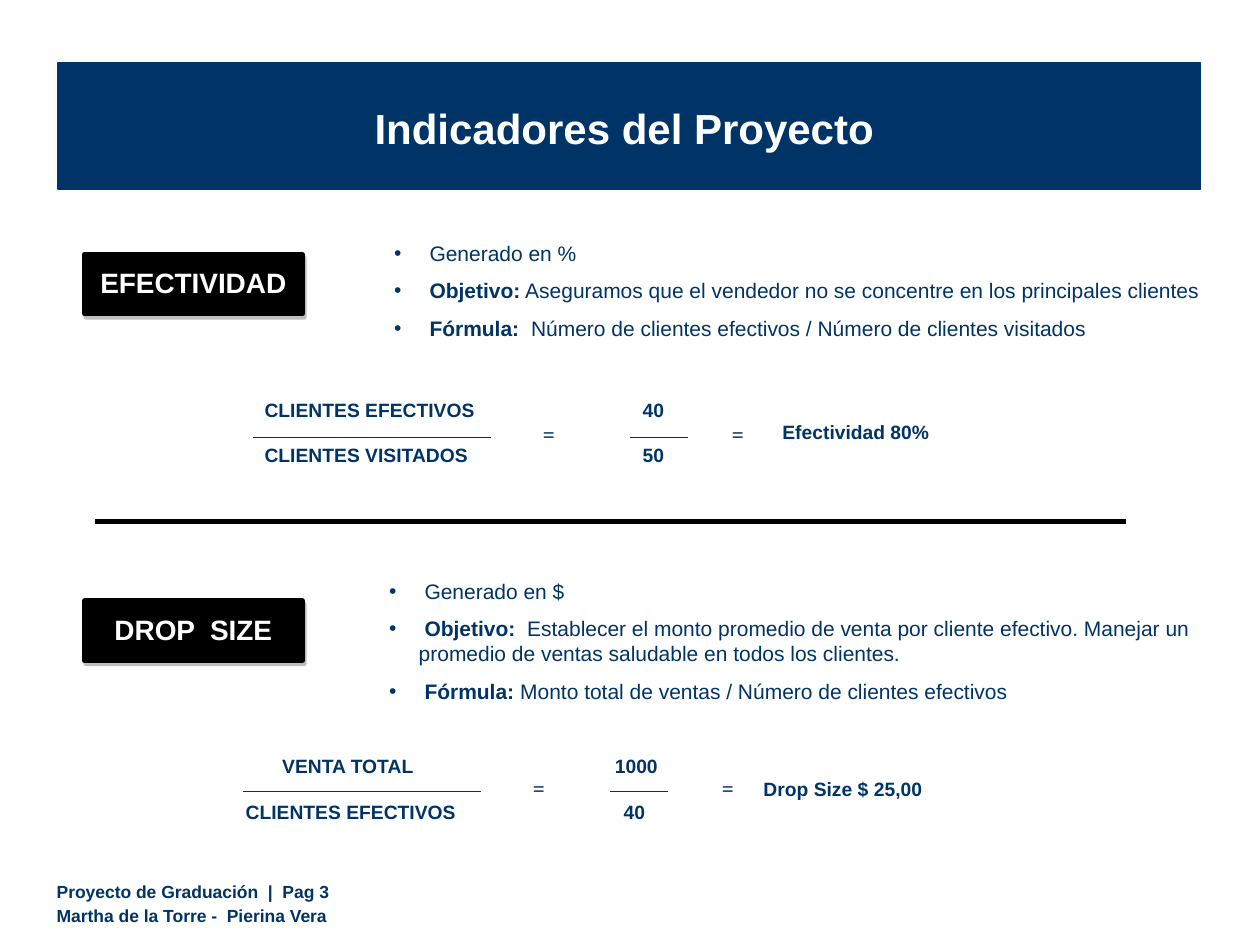
from lxml import etree
from pptx import Presentation
from pptx.dml.color import RGBColor
from pptx.enum.shapes import MSO_CONNECTOR, MSO_SHAPE
from pptx.enum.text import MSO_ANCHOR, PP_ALIGN
from pptx.oxml import parse_xml
from pptx.oxml.ns import nsdecls, qn
from pptx.util import Inches, Pt

RECTANGLE = MSO_SHAPE.RECTANGLE
STRAIGHT = MSO_CONNECTOR.STRAIGHT
LEFT, CENTER = PP_ALIGN.LEFT, PP_ALIGN.CENTER
TOP, MIDDLE, BOTTOM = MSO_ANCHOR.TOP, MSO_ANCHOR.MIDDLE, MSO_ANCHOR.BOTTOM
NAVY, WHITE, BLACK = "003366", "FFFFFF", "000000"

TITLE = "Indicadores del Proyecto"
FOOTER = ["Proyecto de Graduación  |  Pag 3", "Martha de la Torre -  Pierina Vera"]
INDICATORS = [
    {
        "label": "EFECTIVIDAD", "label_top": 2.02,
        "bullets_at": (3.03, 1.86, 6.73, 0.9),
        "bullets": [
            ("", " Generado en %"),
            (" Objetivo:", " Aseguramos que el vendedor no se concentre en los principales clientes"),
            (" Fórmula:", "  Número de clientes efectivos / Número de clientes visitados"),
        ],
        "bar_start": (2.01, 3.47), "value_bar": 5.0,
        "terms": [
            ("CLIENTES EFECTIVOS", 2.1, 3.25), ("CLIENTES VISITADOS", 2.1, 3.61),
            ("40", 5.1, 3.25), ("50", 5.1, 3.61), ("Efectividad 80%", 6.21, 3.43),
        ],
    },
    {
        "label": "DROP  SIZE", "label_top": 4.77,
        "bullets_at": (2.99, 4.54, 6.73, 1.1),
        "bullets": [
            ("", " Generado en $"),
            (" Objetivo:", "  Establecer el monto promedio de venta por cliente efectivo. "
             "Manejar un promedio de ventas saludable en todos los clientes."),
            (" Fórmula: ", "Monto total de ventas / Número de clientes efectivos"),
        ],
        "bar_start": (1.93, 6.28), "value_bar": 4.84,
        "terms": [
            ("VENTA TOTAL", 2.24, 6.08), ("CLIENTES EFECTIVOS", 1.95, 6.44),
            ("1000", 4.88, 6.08), ("40", 4.95, 6.44), ("Drop Size $ 25,00", 6.06, 6.26),
        ],
    },
]


def color(value):
    return RGBColor.from_string(value)


def set_frame(box, insets, anchor):
    frame = box.text_frame
    frame.word_wrap = True
    frame.vertical_anchor = anchor
    frame.margin_left, frame.margin_top, frame.margin_right, frame.margin_bottom = map(Inches, insets)
    return frame


def style(span, size, ink=NAVY, bold=True, font="Arial"):
    span.font.name = font
    span.font.size = Pt(size)
    span.font.bold = bold
    span.font.color.rgb = color(ink)


def write(box, text, size, ink=NAVY, align=LEFT, anchor=TOP,
          insets=(0.1, 0.05, 0.1, 0.05), space=0, font="Arial"):
    frame = set_frame(box, insets, anchor)
    frame.text = text
    for para in frame.paragraphs:
        para.alignment = align
        para.space_before = Pt(space)
        for span in para.runs:
            style(span, size, ink, font=font)


def add_box(page, place):
    return page.shapes.add_textbox(*map(Inches, place))


def add_rectangle(page, place, fill, border, width):
    box = page.shapes.add_shape(RECTANGLE, *map(Inches, place))
    box.shadow.inherit = False
    box.fill.solid()
    box.fill.fore_color.rgb = color(fill)
    box.line.color.rgb = color(border)
    box.line.width = Pt(width)
    return box


def add_line(page, left, top, length, ink, width):
    line = page.shapes.add_connector(STRAIGHT, *map(Inches, (left, top, left + length, top)))
    line.line.color.rgb = color(ink)
    line.line.width = Pt(width)
    etree.SubElement(line._element.spPr, qn("a:effectLst"))


def add_label(page, text, top):
    box = add_rectangle(page, (0.67, top, 1.73, 0.47), BLACK, BLACK, 3)
    effects = box._element.spPr.find(qn("a:effectLst"))
    effects.append(parse_xml(
        f'<a:outerShdw {nsdecls("a")} dist="27940" dir="3780000" rotWithShape="0">'
        '<a:srgbClr val="7F7F7F"><a:alpha val="50000"/></a:srgbClr></a:outerShdw>'))
    write(box, text, 16, WHITE, CENTER, insets=(0.1, 0.09, 0.1, 0.05))


def add_bullets(page, place, items):
    frame = set_frame(add_box(page, place), (0.1, 0.05, 0.1, 0.05), TOP)
    for index, (lead, rest) in enumerate(items):
        para = frame.add_paragraph() if index else frame.paragraphs[0]
        para.space_before = Pt(7)
        properties = para._p.get_or_add_pPr()
        properties.set("marL", str(Inches(0.235)))
        properties.set("indent", str(-Inches(0.235)))
        etree.SubElement(properties, qn("a:buFont")).set("typeface", "Arial")
        etree.SubElement(properties, qn("a:buChar")).set("char", "•")
        for text, bold in ((lead, True), (rest, False)):
            if text:
                span = para.add_run()
                span.text = text
                style(span, 12, bold=bold)


def add_formula(page, bar_start, value_bar, terms):
    left, top = bar_start
    add_line(page, left, top, 1.89, NAVY, 0.75)
    add_line(page, value_bar, top, 0.46, NAVY, 0.75)
    for offset in (2.2, 3.7):
        box = add_rectangle(page, (left + offset, top - 0.17, 0.29, 0.24), WHITE, WHITE, 0.75)
        write(box, "=", 12, font="Times New Roman")
    for text, text_left, middle in terms:
        box = add_box(page, (text_left, middle - 0.1, 2, 0.2))
        write(box, text, 11, anchor=MIDDLE, insets=(0, 0, 0, 0))


def main():
    deck = Presentation()
    deck.slide_width, deck.slide_height = Inches(10), Inches(7.5)
    page = deck.slides.add_slide(deck.slide_layouts[6])
    write(add_box(page, (0.45, 6.99, 6.07, 0.36)), "\n".join(FOOTER), 10,
          insets=(0, 0, 0, 0), space=2)
    add_rectangle(page, (0.46, 0.5, 9.07, 1), NAVY, NAVY, 0.75)
    write(add_box(page, (0.47, 0.76, 8.97, 0.5)), TITLE, 24, WHITE, CENTER, BOTTOM)
    for item in INDICATORS:
        add_label(page, item["label"], item["label_top"])
        add_bullets(page, item["bullets_at"], item["bullets"])
        add_formula(page, item["bar_start"], item["value_bar"], item["terms"])
    add_line(page, 0.75, 4.14, 8.19, BLACK, 2.75)
    deck.save("out.pptx")


if __name__ == "__main__":
    main()
